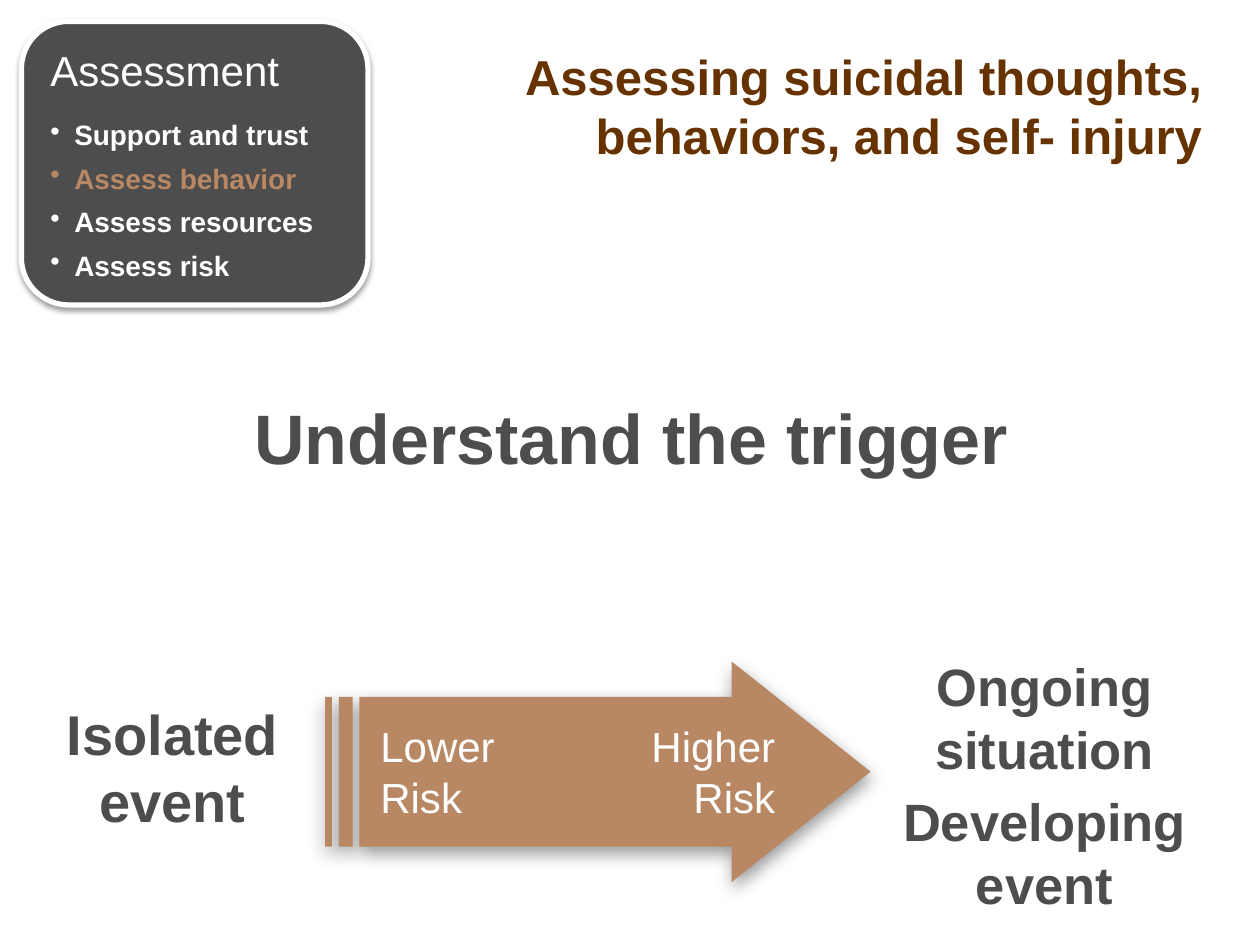
from dataclasses import dataclass
from typing import NamedTuple

from lxml.etree import SubElement
from pptx import Presentation
from pptx.dml.color import RGBColor
from pptx.enum.shapes import MSO_SHAPE as Preset
from pptx.enum.text import MSO_ANCHOR as Anchor, PP_ALIGN as Align
from pptx.oxml.ns import qn
from pptx.util import Inches, Pt


@dataclass(frozen=True)
class Theme:
    font: str = "Arial"
    brown: str = "663300"
    gray: str = "4D4D4D"
    tan: str = "B88764"
    white: str = "FFFFFF"
    shadow: str = "000000"
    title: int = 28
    heading: int = 40
    event: int = 32
    outcome: int = 30
    label: int = 24
    bullet: int = 16


class Area(NamedTuple):
    left: float
    top: float
    width: float
    height: float

    def lengths(self):
        return [Inches(value) for value in self]


class Shadow(NamedTuple):
    alpha: int
    blur: float
    distance: float


class Label(NamedTuple):
    area: Area
    lines: tuple[str, ...]
    size: int
    color: str
    bold: bool = True
    align: Align = Align.CENTER


THEME = Theme()
ARROW_LABELS_TOP = 5.67
LABELS = (
    Label(Area(1.92, 3.08, 6.5, 1.42), ("Understand the trigger",),
          THEME.heading, THEME.gray, align=Align.LEFT),
    Label(Area(0.33, 5.5, 2.08, 1.18), ("Isolated event",), THEME.event, THEME.gray),
    Label(Area(6.83, 5.14, 2.92, 2.19), ("Ongoing situation", "Developing event"),
          THEME.outcome, THEME.gray),
    Label(Area(2.92, ARROW_LABELS_TOP, 1.25, 0.91), ("Lower Risk",),
          THEME.label, THEME.white, False, Align.LEFT),
    Label(Area(5, ARROW_LABELS_TOP, 1.25, 0.91), ("Higher Risk",),
          THEME.label, THEME.white, False, Align.RIGHT),
)
STEPS = ("Support and trust", "Assess behavior", "Assess resources", "Assess risk")
CURRENT_STEP = "Assess behavior"


def style(para, size: int, color: str, bold: bool) -> None:
    font = para.font
    font.name, font.size, font.bold = THEME.font, Pt(size), bold
    font.color.rgb = RGBColor.from_string(color)


def add_block(slide, preset: Preset, area: Area, color: str, shadow: Shadow):
    """Add a filled shape without outline that casts a shadow straight down."""
    block = slide.shapes.add_shape(preset, *area.lengths())
    block.fill.solid()
    block.fill.fore_color.rgb = RGBColor.from_string(color)
    block.line.fill.background()
    block.shadow.inherit = False
    effects = block._element.spPr.find(qn("a:effectLst"))
    outer = SubElement(effects, qn("a:outerShdw"), blurRad=str(Pt(shadow.blur)),
                       dist=str(Pt(shadow.distance)), dir="5400000",
                       algn="ctr", rotWithShape="0")
    shade = SubElement(outer, qn("a:srgbClr"), val=THEME.shadow)
    SubElement(shade, qn("a:alpha"), val=str(shadow.alpha * 1000))
    return block


def add_frame(slide, area: Area):
    frame = slide.shapes.add_textbox(*area.lengths()).text_frame
    frame.word_wrap = True
    return frame


def add_label(slide, label: Label) -> None:
    frame = add_frame(slide, label.area)
    frame.text = "\n".join(label.lines)
    for index, para in enumerate(frame.paragraphs):
        para.alignment = label.align
        if index:
            para.space_before = Pt(5)
        style(para, label.size, label.color, label.bold)


def add_bullet(para) -> None:
    properties = para._p.get_or_add_pPr()
    properties.set("marL", str(Inches(0.19)))
    properties.set("indent", str(-Inches(0.19)))
    SubElement(properties, qn("a:buChar"), char="•")


def add_assessment(slide) -> None:
    card = add_block(slide, Preset.ROUNDED_RECTANGLE, Area(0.17, 0.17, 2.75, 2.25),
                     THEME.gray, Shadow(38, 3.1, 1.6))
    card.line.color.rgb = RGBColor.from_string(THEME.white)
    card.line.width = Pt(3)

    frame = add_frame(slide, Area(0.28, 0.28, 2.53, 2.03))
    frame.margin_left = frame.margin_right = Inches(0.12)
    frame.margin_top = frame.margin_bottom = Inches(0.12)
    heading = frame.paragraphs[0]
    heading.text = "Assessment"
    heading.line_spacing, heading.space_after = 0.9, Pt(10)
    style(heading, THEME.label, THEME.white, False)
    for step in STEPS:
        para = frame.add_paragraph()
        para.text = step
        para.level = 1
        para.line_spacing, para.space_after = 1.14, Pt(3)
        add_bullet(para)
        color = THEME.tan if step == CURRENT_STEP else THEME.white
        style(para, THEME.bullet, color, True)


def set_title(slide) -> None:
    title = slide.shapes.title
    title.left, title.top, title.width, title.height = Area(3.33, 0, 6.31, 1.67).lengths()
    frame = title.text_frame
    frame.text = "Assessing suicidal thoughts, behaviors, and self- injury"
    frame.word_wrap = True
    frame.vertical_anchor = Anchor.MIDDLE
    para = frame.paragraphs[0]
    para.alignment = Align.RIGHT
    style(para, THEME.title, THEME.brown, True)


def main() -> None:
    deck = Presentation()
    deck.slide_width, deck.slide_height = Inches(10), Inches(7.5)
    slide = deck.slides.add_slide(deck.slide_layouts[5])
    set_title(slide)
    add_assessment(slide)
    arrow = add_block(slide, Preset.STRIPED_RIGHT_ARROW, Area(2.58, 5.25, 4.33, 1.75),
                      THEME.tan, Shadow(40, 10, 4))
    arrow.adjustments[0], arrow.adjustments[1] = 0.68, 0.63
    for label in LABELS:
        add_label(slide, label)
    deck.save("out.pptx")


if __name__ == "__main__":
    main()
